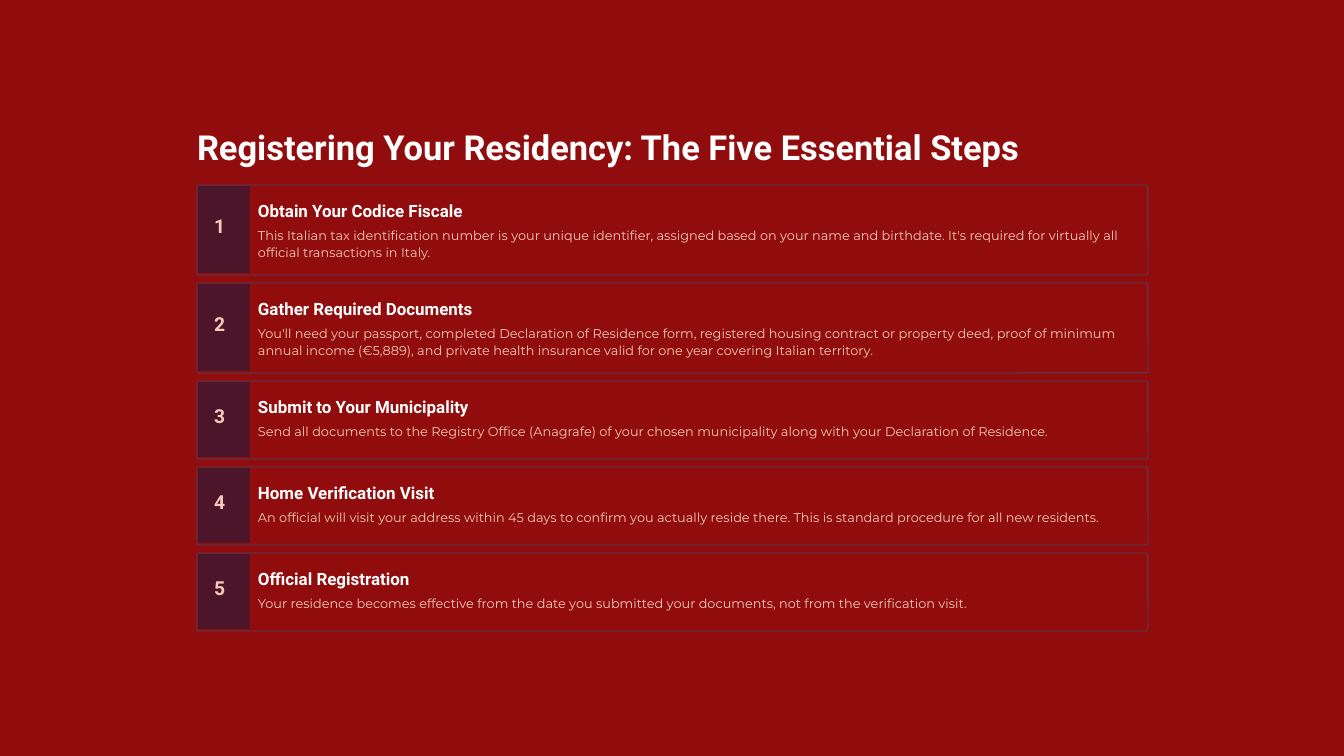
from dataclasses import dataclass

from pptx import Presentation
from pptx.dml.color import RGBColor as Rgb
from pptx.enum.shapes import MSO_SHAPE as Shape
from pptx.enum.text import MSO_ANCHOR as Anchor, MSO_AUTO_SIZE as Auto, PP_ALIGN as Align
from pptx.util import Emu, Pt

SCALE = 914400 / 84


def px(n):
    return Emu(round(n * SCALE))


@dataclass(frozen=True)
class Type:
    font: str
    size: float
    line: float
    color: str
    bold: bool


@dataclass(frozen=True)
class Theme:
    back: str = "910D0D"
    edge: str = "662E42"
    badge: str = "4D1529"
    title: Type = Type("Roboto", 29.5, 36.5, "FFFFFF", True)
    head: Type = Type("Roboto", 14.5, 18, "FFFFFF", True)
    digit: Type = Type("Roboto", 16.5, 16.5, "F4CAB8", True)
    body: Type = Type("Montserrat", 11, 14.5, "F4CAB8", False)


class Page:
    def __init__(self, deck, theme):
        self.theme = theme
        self.slide = deck.slides.add_slide(deck.slide_layouts[5])
        fill = self.slide.background.fill
        fill.solid()
        fill.fore_color.rgb = Rgb.from_string(theme.back)

    def label(self, shape, text, style):
        frame = shape.text_frame
        frame.margin_left = frame.margin_right = 0
        frame.margin_top = frame.margin_bottom = 0
        frame.word_wrap = True
        frame.auto_size = Auto.NONE
        frame.vertical_anchor = Anchor.TOP
        para = frame.paragraphs[0]
        para.alignment = Align.LEFT
        para.line_spacing = Pt(style.line)
        para.space_before = Pt(0)
        run = para.add_run()
        run.text = text
        font = run.font
        font.name = style.font
        font.size = Pt(style.size)
        font.bold = style.bold
        font.color.rgb = Rgb.from_string(style.color)

    def title(self, x, y, w, h, text):
        shape = self.slide.shapes.title
        shape.left, shape.top, shape.width, shape.height = map(px, (x, y, w, h))
        self.label(shape, text, self.theme.title)

    def text(self, x, y, w, h, text, style):
        shape = self.slide.shapes.add_textbox(*map(px, (x, y, w, h)))
        self.label(shape, text, style)

    def box(self, x, y, w, h, fill, curve, edge=None):
        shape = self.slide.shapes.add_shape(Shape.ROUNDED_RECTANGLE, *map(px, (x, y, w, h)))
        shape.shadow.inherit = False
        shape.adjustments[0] = curve / min(w, h)
        shape.fill.solid()
        shape.fill.fore_color.rgb = Rgb.from_string(fill)
        if edge:
            shape.line.color.rgb = Rgb.from_string(edge)
            shape.line.width = Pt(1.2)
        else:
            shape.line.fill.background()

    def step(self, y, tall, digit, head, wide, body):
        theme = self.theme
        self.box(197, y, 951, tall, theme.back, 2, theme.edge)
        self.box(198, y + 1, 52, tall - 3, theme.badge, 0.25)
        self.text(214, y + (tall - 23) // 2, 19, 24, str(digit), theme.digit)
        self.text(258, y + 15, wide, 22, head, theme.head)
        self.text(258, y + 41, 875, tall - 56, body, theme.body)


GAP = 8
STEPS = [
    ("Obtain Your Codice Fiscale", 221,
     "This Italian tax identification number is your unique identifier, assigned based on "
     "your name and birthdate. It's required for virtually all official transactions in Italy.", 90),
    ("Gather Required Documents", 238,
     "You'll need your passport, completed Declaration of Residence form, registered housing "
     "contract or property deed, proof of minimum annual income (€5,889), and private health "
     "insurance valid for one year covering Italian territory.", 90),
    ("Submit to Your Municipality", 234,
     "Send all documents to the Registry Office (Anagrafe) of your chosen municipality along "
     "with your Declaration of Residence.", 78),
    ("Home Verification Visit", 193,
     "An official will visit your address within 45 days to confirm you actually reside there. "
     "This is standard procedure for all new residents.", 78),
    ("Official Registration", 172,
     "Your residence becomes effective from the date you submitted your documents, not from "
     "the verification visit.", 78),
]


def main():
    deck = Presentation()
    deck.slide_width, deck.slide_height = px(1344), px(756)
    page = Page(deck, Theme())
    page.title(197, 125, 863, 43, "Registering Your Residency: The Five Essential Steps")
    y = 185
    for digit, (head, wide, body, tall) in enumerate(STEPS, 1):
        page.step(y, tall, digit, head, wide, body)
        y += tall + GAP
    deck.save("out.pptx")


if __name__ == "__main__":
    main()
